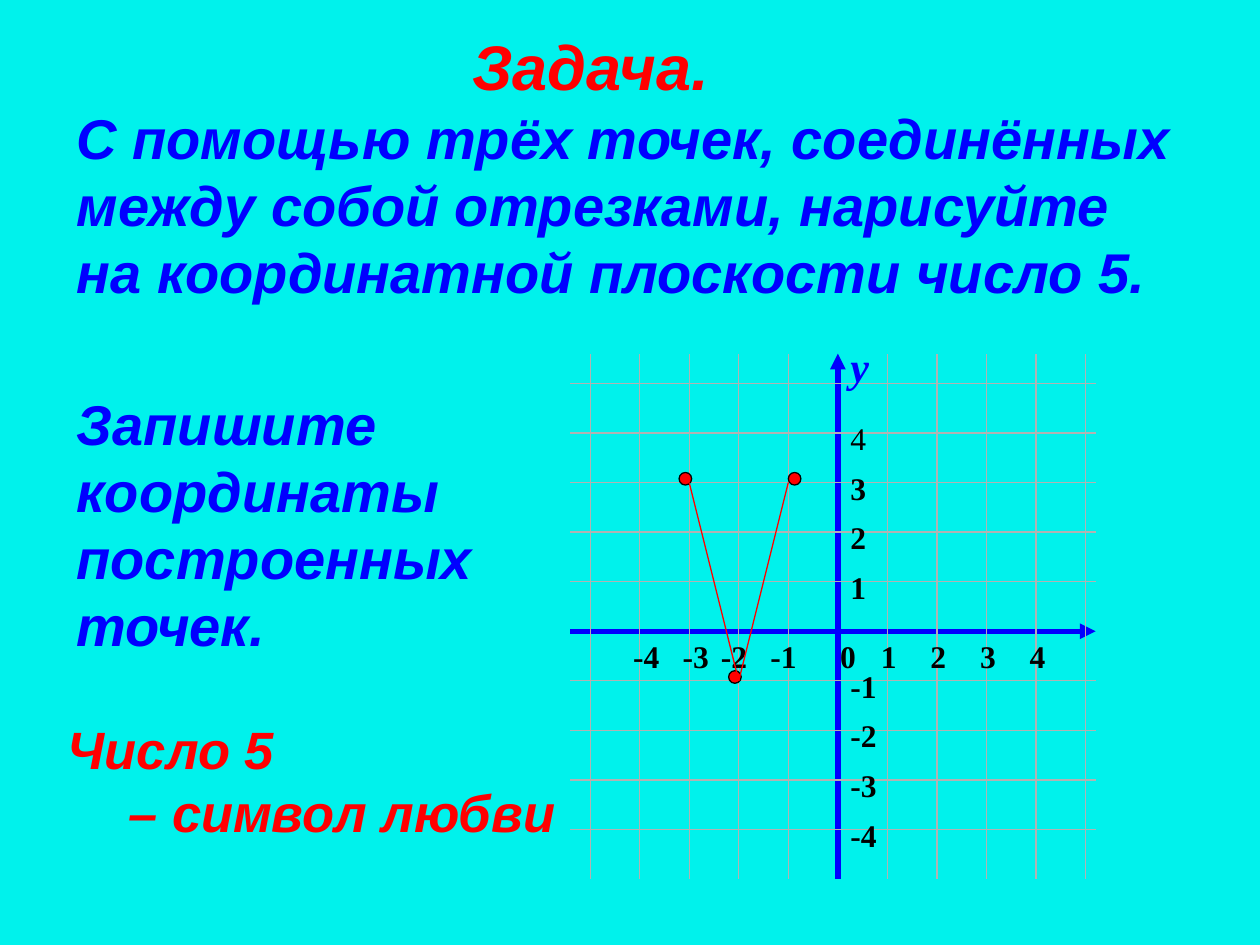
from lxml.etree import SubElement
from pptx import Presentation
from pptx.dml.color import RGBColor
from pptx.enum.shapes import MSO_CONNECTOR as Connector, MSO_SHAPE as Shape
from pptx.enum.text import MSO_ANCHOR as Anchor
from pptx.oxml.ns import qn
from pptx.util import Inches, Pt

BACKGROUND = RGBColor(0x00, 0xF2, 0xEC)
BLUE = RGBColor(0x00, 0x00, 0xFF)
RED = RGBColor(0xFF, 0x00, 0x00)
GREY = RGBColor(0xB2, 0xB2, 0xB2)
BLACK = RGBColor(0x00, 0x00, 0x00)

# Coordinate plane: origin in inches, edges in grid units
ORIGIN_X, ORIGIN_Y = 6.65, 5.01
LEFT, RIGHT, BOTTOM, TOP = -5.4, 5.2, -5, 5.6
STEP = 4.17 / (RIGHT - LEFT)

HEADING = dict(name="Arial", size=Pt(36), bold=True, italic=True)
BODY = dict(HEADING, size=Pt(32))
CLOSING = dict(HEADING, size=Pt(30))
NUMBER = dict(name="Times New Roman", size=Pt(18), bold=True, italic=False)
AXIS_NAME = dict(NUMBER, size=Pt(24), italic=True)


def plane(column, row):
    """Turn grid coordinates into inches on the slide."""
    return ORIGIN_X + column * STEP, ORIGIN_Y - row * STEP


def add_text(shapes, place, lines, anchor=Anchor.TOP, wrap=True, bottom=0.05):
    """Each line is (text, font format, colour, indent in inches)."""
    box = shapes.add_textbox(*map(Inches, place))
    frame = box.text_frame
    settings = dict(word_wrap=wrap, vertical_anchor=anchor,
                    margin_bottom=Inches(bottom))
    for key, value in settings.items():
        setattr(frame, key, value)
    for index, (text, style, color, indent) in enumerate(lines):
        para = frame.add_paragraph() if index else frame.paragraphs[0]
        para.line_spacing = Pt(style["size"].pt * 1.2)
        if indent:
            para._p.get_or_add_pPr().set("marL", str(Inches(indent)))
        span = para.add_run()
        span.text = text
        for key, value in style.items():
            setattr(span.font, key, value)
        span.font.color.rgb = color


def add_line(shapes, start, end, color, width, arrow=False):
    """Draw a segment between two points of the plane."""
    ends = [Inches(length) for point in (start, end) for length in plane(*point)]
    line = shapes.add_connector(Connector.STRAIGHT, *ends)
    line.line.color.rgb = color
    line.line.width = Pt(width)
    if arrow:
        SubElement(line.line._get_or_add_ln(), qn("a:tailEnd"), type="triangle")
    SubElement(line._element.spPr, qn("a:effectLst"))


def add_dot(shapes, point, shift):
    """Mark a point with a small circle, moved by shift inches."""
    size = 0.1
    place = [length + move - size / 2 for length, move in zip(plane(*point), shift)]
    dot = shapes.add_shape(Shape.OVAL, *map(Inches, (*place, size, size)))
    dot.shadow.inherit = False
    dot.fill.solid()
    dot.fill.fore_color.rgb = RED
    dot.line.color.rgb = BLACK
    dot.line.width = Pt(0.75)


def add_number(shapes, value, left, top, style=NUMBER):
    width = 0.41 if value < 0 else 0.33
    add_text(shapes, (left, top, width, 0.4), [(str(value), style, BLACK, 0)],
             wrap=False)


def add_plane(shapes):
    # Axes
    add_line(shapes, (LEFT, 0), (RIGHT, 0), BLUE, 3, arrow=True)
    add_line(shapes, (0, BOTTOM), (0, TOP), BLUE, 3, arrow=True)

    # Grid
    for row in range(-4, 6):
        if row:
            add_line(shapes, (LEFT, row), (RIGHT, row), GREY, 0.75)
    for column in range(-5, 6):
        if column:
            width = 0.5 if column == -5 else 0.75
            add_line(shapes, (column, BOTTOM), (column, TOP), GREY, width)

    # Axis name and numbers
    add_text(shapes, (ORIGIN_X, 2.65, 0.55, 0.5), [("y", AXIS_NAME, BLUE, 0)])
    for value in range(-4, 5):
        x, y = plane(value, value)
        if value:
            shift = -0.24 if value in (-1, -2) else -0.15
            add_number(shapes, value, x + shift, ORIGIN_Y)
            style = dict(NUMBER, bold=value != 4)
            add_number(shapes, value, ORIGIN_X, y - 0.16, style)
        else:
            add_number(shapes, value, x - 0.08, ORIGIN_Y)


def add_figure(shapes):
    points = [(-3, 3), (-2, -1), (-1, 3)]
    shifts = [(-0.03, -0.03), (-0.03, -0.03), (0.05, -0.03)]
    for point, shift in zip(points, shifts):
        add_dot(shapes, point, shift)
    for start, end in zip(points, points[1:]):
        add_line(shapes, start, end, RED, 0.75)


def main():
    deck = Presentation()
    deck.slide_width, deck.slide_height = Inches(10), Inches(7.5)
    page = deck.slides.add_slide(deck.slide_layouts[6])
    page.background.fill.solid()
    page.background.fill.fore_color.rgb = BACKGROUND

    # Task
    add_text(page.shapes, (0.51, 0.6, 8.99, 1.97), [
        ("Задача.", HEADING, RED, 3.14),
        ("С помощью трёх точек, соединённых между собой отрезками, "
         "нарисуйте на координатной плоскости число 5.", BODY, BLUE, 0),
    ], anchor=Anchor.MIDDLE, bottom=0.58)

    # Coordinate plane with the drawn figure
    add_plane(page.shapes.add_group_shape().shapes)
    add_figure(page.shapes.add_group_shape().shapes)

    # Question and closing words
    add_text(page.shapes, (0.51, 3.04, 3.56, 2.23), [
        ("Запишите координаты построенных точек.", BODY, BLUE, 0)])
    add_text(page.shapes, (0, 5.64, 4.6, 1.1), [
        ("Число 5", CLOSING, RED, 0.44),
        ("– символ любви", CLOSING, RED, 0.92)])

    deck.save("out.pptx")


if __name__ == "__main__":
    main()
